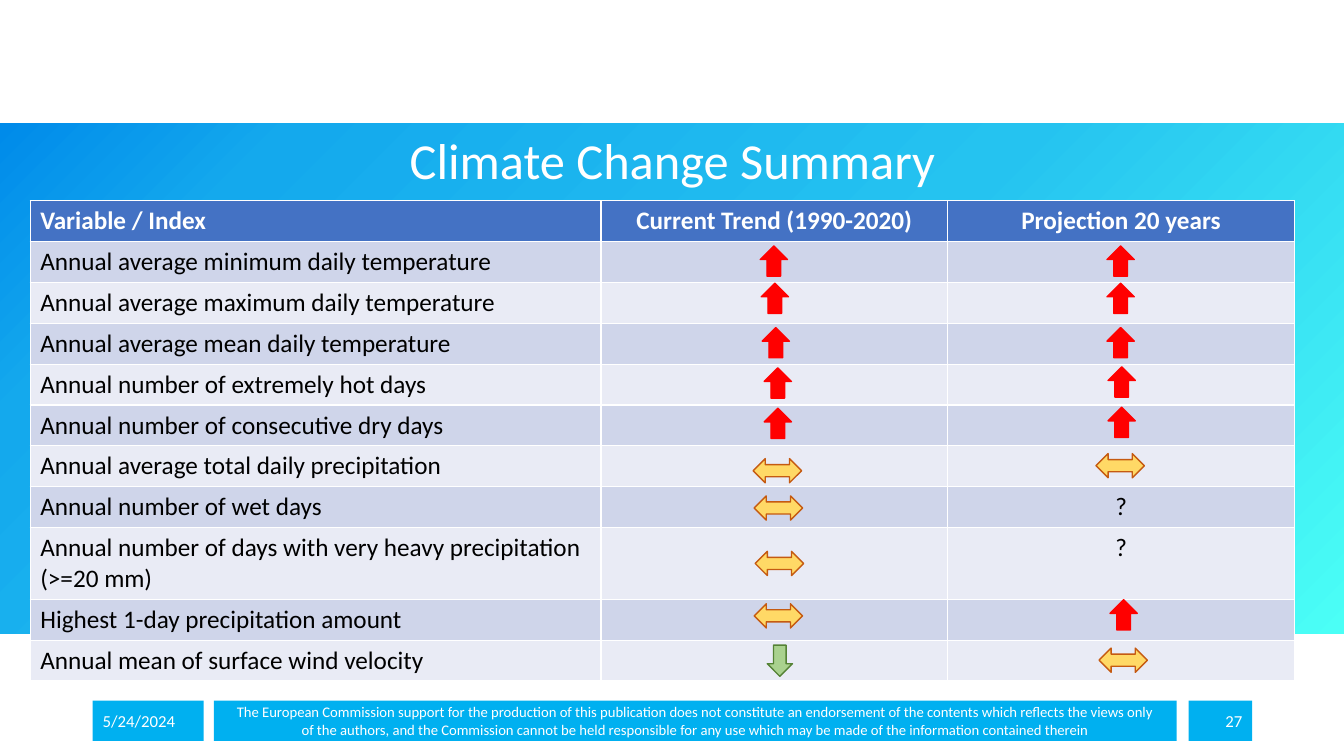
"""Build the climate change summary slide."""
from lxml import etree
from pptx import Presentation
from pptx import util as u
from pptx.dml.color import RGBColor
from pptx.enum import shapes, text
from pptx.oxml import ns

COLOURS = {
    "white": "FFFFFF", "black": "000000", "footer": "00B0F0",
    "header": "4472C4", "dark band": "CFD5EA", "light band": "E9EBF5",
}
GRADIENT = {0: "4BFFF6", 44: "25C3F0", 84: "14A9ED", 100: "008BEA"}
LEFT, CENTER, RIGHT = text.PP_ALIGN.LEFT, text.PP_ALIGN.CENTER, text.PP_ALIGN.RIGHT
ARROWS = {
    "up": (shapes.MSO_SHAPE.UP_ARROW, 0.27, 0.3, "FF0000", "FF0000"),
    "down": (shapes.MSO_SHAPE.DOWN_ARROW, 0.25, 0.31, "A9D18E", "548235"),
    "steady": (shapes.MSO_SHAPE.LEFT_RIGHT_ARROW, 0.48, 0.24, "FFD966", "C55A11"),
}
HEADINGS = ["Variable / Index", "Current Trend (1990-2020)", "Projection 20 years"]
VARIABLES = [
    ("Annual average minimum daily temperature", ("up", 7.54, 2.44), ("up", 10.98, 2.44)),
    ("Annual average maximum daily temperature", ("up", 7.55, 2.81), ("up", 10.98, 2.81)),
    ("Annual average mean daily temperature", ("up", 7.56, 3.25), ("up", 10.98, 3.25)),
    ("Annual number of extremely hot days", ("up", 7.58, 3.65), ("up", 10.99, 3.64)),
    ("Annual number of consecutive dry days", ("up", 7.58, 4.05), ("up", 10.99, 4.04)),
    ("Annual average total daily precipitation", ("steady", 7.47, 4.55), ("steady", 10.87, 4.5)),
    ("Annual number of wet days", ("steady", 7.48, 4.92), None),
    ("Annual number of days with very heavy precipitation (>=20 mm)", ("steady", 7.49, 5.47), None),
    ("Highest 1-day precipitation amount", ("steady", 7.48, 5.99), ("up", 11.01, 5.95)),
    ("Annual mean of surface wind velocity", ("down", 7.61, 6.4), ("steady", 10.9, 6.43)),
]
FOOTERS = [
    (0.92, 1.1, LEFT, 12, ["5/24/2024"]),
    (2.12, 9.55, CENTER, 10.5, [
        "The European Commission support for the production of this publication does not "
        "constitute an endorsement of the contents which reflects the views only",
        "of the authors, and the Commission cannot be held responsible for any use which "
        "may be made of the information contained therein",
    ]),
    (11.79, 0.63, RIGHT, 12, ["27"]),
]

deck = Presentation()
deck.slide_width, deck.slide_height = u.Inches(13.33), u.Inches(7.5)
page = deck.slides.add_slide(deck.slide_layouts[5])


def add_box(kind, left, top, width, height, fill, line=None):
    box = page.shapes.add_shape(kind, *map(u.Inches, (left, top, width, height)))
    box.shadow.inherit = False
    box.fill.solid()
    box.fill.fore_color.rgb = RGBColor.from_string(fill)
    if line:
        box.line.color.rgb = RGBColor.from_string(line)
        box.line.width = u.Pt(1)
    else:
        box.line.fill.background()
    return box


def write(para, words, size, colour, align, bold=False):
    para.alignment = align
    span = para.add_run()
    span.text = words
    span.font.name = "Calibri"
    span.font.size = u.Pt(size)
    span.font.bold = bold
    span.font.color.rgb = RGBColor.from_string(COLOURS[colour])


band = add_box(shapes.MSO_SHAPE.RECTANGLE, 0, 1.23, 13.33, 5.06, GRADIENT[0])
solid = band._element.spPr.find(ns.qn("a:solidFill"))
gradient = etree.Element(ns.qn("a:gradFill"), rotWithShape="1")
stops = etree.SubElement(gradient, ns.qn("a:gsLst"))
for share, colour in GRADIENT.items():
    stop = etree.SubElement(stops, ns.qn("a:gs"), pos=str(share * 1000))
    etree.SubElement(stop, ns.qn("a:srgbClr"), val=colour)
etree.SubElement(gradient, ns.qn("a:lin"), ang=str(225 * 60000), scaled="0")
solid.getparent().replace(solid, gradient)

title = page.shapes.title
title._element.addprevious(band._element)
title.left, title.top = u.Inches(0.92), u.Inches(1.23)
title.width, title.height = u.Inches(11.5), u.Inches(0.71)
title.text_frame.vertical_anchor = text.MSO_ANCHOR.BOTTOM
title.text_frame.auto_size = text.MSO_AUTO_SIZE.NONE
title.text_frame.paragraphs[0].line_spacing = 0.9
write(title.text_frame.paragraphs[0], "Climate Change Summary", 36, "white", CENTER)

for left, width, align, size, lines in FOOTERS:
    box = add_box(shapes.MSO_SHAPE.RECTANGLE, left, 6.95, width, 0.4, COLOURS["footer"])
    frame = box.text_frame
    frame.word_wrap = True
    frame.vertical_anchor = text.MSO_ANCHOR.MIDDLE
    for number, line in enumerate(lines):
        para = frame.add_paragraph() if number else frame.paragraphs[0]
        write(para, line, size, "white", align)

rows = [HEADINGS] + [
    [name] + ["" if arrow else "?" for arrow in arrows] for name, *arrows in VARIABLES
]
table = page.shapes.add_table(
    len(rows), 3, u.Inches(0.3), u.Inches(1.99), u.Inches(12.54), u.Inches(4.4)
).table
for column, width in zip(table.columns, (5.66, 3.44, 3.44)):
    column.width = u.Inches(width)
for r, words in enumerate(rows):
    table.rows[r].height = u.Inches(0.7 if r == 8 else 0.4)
    fill = "header" if r == 0 else "dark band" if r % 2 else "light band"
    for c, word in enumerate(words):
        cell = table.cell(r, c)
        cell.fill.solid()
        cell.fill.fore_color.rgb = RGBColor.from_string(COLOURS[fill])
        para = cell.text_frame.paragraphs[0]
        para.font.size = u.Pt(18)
        if word:
            write(para, word, 18, "black" if r else "white", CENTER if c else LEFT, r == 0)

for name, *arrows in VARIABLES:
    for trend, left, top in filter(None, arrows):
        kind, width, height, fill, line = ARROWS[trend]
        add_box(kind, left, top, width, height, fill, line)

deck.save("out.pptx")
